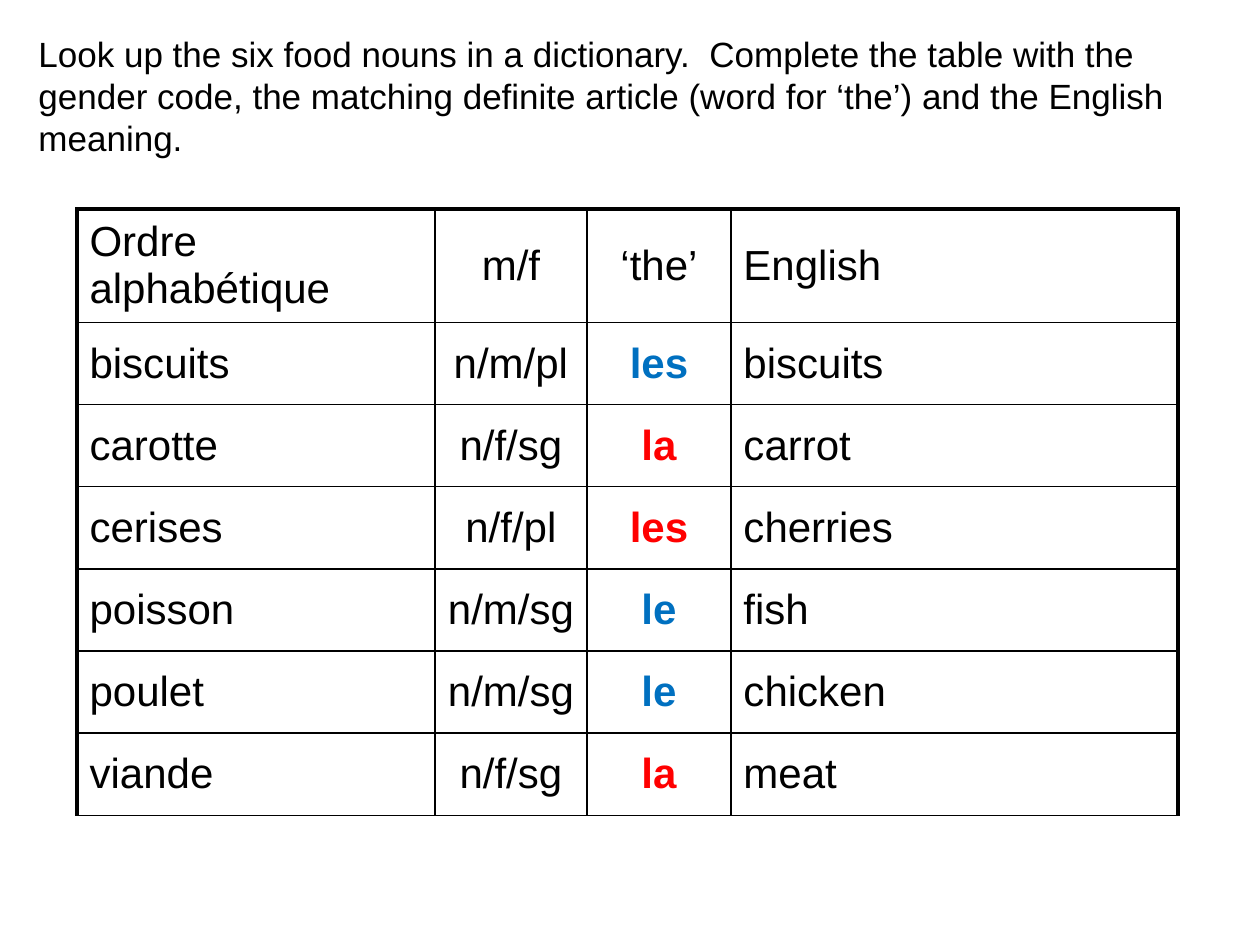
from dataclasses import dataclass

from lxml.etree import SubElement
from pptx import Presentation
from pptx.dml.color import RGBColor
from pptx.enum.text import MSO_ANCHOR, MSO_AUTO_SIZE, PP_ALIGN
from pptx.oxml.ns import qn
from pptx.util import Pt

PX = 914400 / 126


@dataclass(frozen=True)
class Theme:
    font: str = "Arial"
    ink: str = "000000"
    masculine: str = "0070C0"
    feminine: str = "FF0000"
    task_size: int = 20
    table_size: int = 24
    frame: float = 2.25
    rule: float = 1


THEME = Theme()
TASK = (
    "Look up the six food nouns in a dictionary.  Complete the table with the "
    "gender code, the matching definite article (word for ‘the’) and the English meaning."
)
HEADINGS = ("Ordre alphabétique", "m/f", "‘the’", "English")
NOUNS = (
    ("biscuits", "n/m/pl", "les", "biscuits"),
    ("carotte", "n/f/sg", "la", "carrot"),
    ("cerises", "n/f/pl", "les", "cherries"),
    ("poisson", "n/m/sg", "le", "fish"),
    ("poulet", "n/m/sg", "le", "chicken"),
    ("viande", "n/f/sg", "la", "meat"),
)
COLUMN_WIDTHS = (358, 152, 144, 447)
HEADING_HEIGHT = 113
CENTRED_COLUMNS = (1, 2)
ARTICLE_COLUMN = 2


def emu(px):
    return round(px * PX)


def write(frame, text, size, color=THEME.ink, bold=False, align=PP_ALIGN.LEFT):
    para = frame.paragraphs[0]
    para.alignment = align
    span = para.add_run()
    span.text = text
    span.font.name = THEME.font
    span.font.size = Pt(size)
    span.font.bold = bold
    span.font.color.rgb = RGBColor.from_string(color)


def add_task(page, left, top, width, height):
    box = page.shapes.add_textbox(*map(emu, (left, top, width, height)))
    box.text_frame.word_wrap = True
    box.text_frame.auto_size = MSO_AUTO_SIZE.SHAPE_TO_FIT_TEXT
    write(box.text_frame, TASK, THEME.task_size)


def set_borders(cell, **widths):
    properties = cell._tc.get_or_add_tcPr()
    for side in ("L", "R", "T", "B"):
        line = SubElement(properties, qn(f"a:ln{side}"), w=str(Pt(widths[side])))
        fill = SubElement(line, qn("a:solidFill"))
        SubElement(fill, qn("a:srgbClr"), val=THEME.ink)


def article_color(gender_code):
    return THEME.masculine if "/m/" in gender_code else THEME.feminine


def add_noun_table(page, left, top, width, height):
    rows = (HEADINGS, *NOUNS)
    table = page.shapes.add_table(
        len(rows), len(HEADINGS), *map(emu, (left, top, width, height))
    ).table
    table.first_row = table.horz_banding = False
    for column, column_width in zip(table.columns, COLUMN_WIDTHS):
        column.width = emu(column_width)
    noun_height = (height - HEADING_HEIGHT) / len(NOUNS)
    last_column = len(HEADINGS) - 1

    for r, words in enumerate(rows):
        table.rows[r].height = emu(noun_height if r else HEADING_HEIGHT)
        for c, word in enumerate(words):
            cell = table.cell(r, c)
            cell.vertical_anchor = MSO_ANCHOR.MIDDLE
            is_article = r > 0 and c == ARTICLE_COLUMN
            write(
                cell.text_frame,
                word,
                THEME.table_size,
                color=article_color(words[1]) if is_article else THEME.ink,
                bold=is_article,
                align=PP_ALIGN.CENTER if c in CENTRED_COLUMNS else PP_ALIGN.LEFT,
            )
            set_borders(
                cell,
                L=THEME.rule if c else THEME.frame,
                R=THEME.frame if c == last_column else THEME.rule,
                T=THEME.rule if r else THEME.frame,
                B=THEME.rule,
            )
            cell.fill.background()


def main():
    deck = Presentation()
    deck.slide_width, deck.slide_height = emu(1260), emu(945)
    page = deck.slides.add_slide(deck.slide_layouts.get_by_name("Blank"))
    add_task(page, 26, 26, 1201, 140)
    add_noun_table(page, 77, 209, sum(COLUMN_WIDTHS), 606)
    deck.save("out.pptx")


if __name__ == "__main__":
    main()
